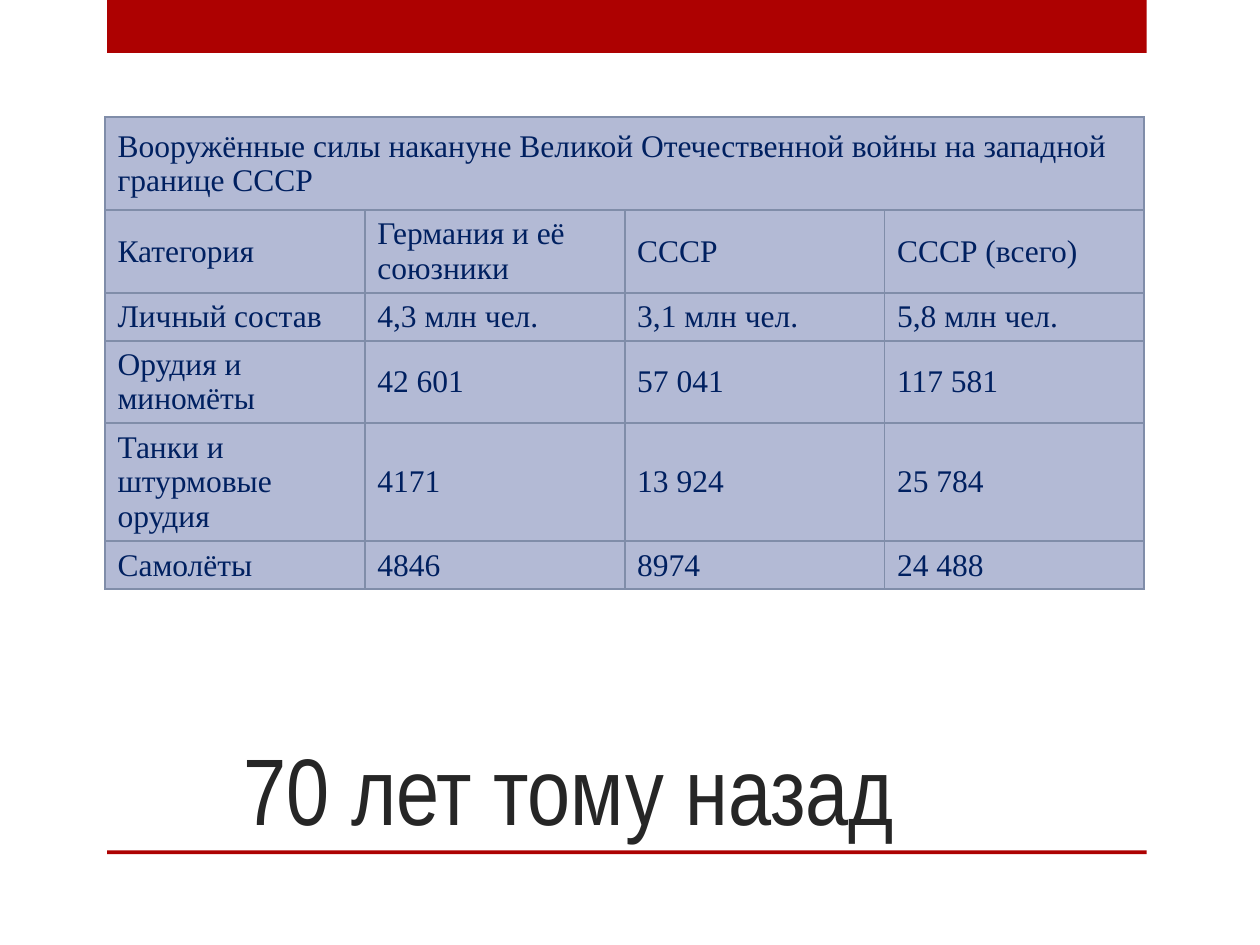
import pptx
import pptx.util
import pptx.dml.color
import pptx.enum.shapes
import pptx.enum.text
import pptx.oxml
import pptx.oxml.ns
import lxml.etree

RGBColor = pptx.dml.color.RGBColor
RED = RGBColor(0xAD, 0x01, 0x01)
CHARCOAL = RGBColor(0x26, 0x26, 0x26)
NAVY = RGBColor(0x00, 0x20, 0x60)
PALE_BLUE = RGBColor(0xB3, 0xBA, 0xD5)
BORDER_BLUE = RGBColor(0x80, 0x8D, 0xA9)

HEADING = "Вооружённые силы накануне Великой Отечественной войны на западной границе СССР"
FORCES = [
    ("Категория", "Германия и её союзники", "СССР", "СССР (всего)"),
    ("Личный состав", "4,3 млн чел.", "3,1 млн чел.", "5,8 млн чел."),
    ("Орудия и миномёты", "42 601", "57 041", "117 581"),
    ("Танки и штурмовые орудия", "4171", "13 924", "25 784"),
    ("Самолёты", "4846", "8974", "24 488"),
]
ROW_HEIGHTS = [0.74, 0.65, 0.38, 0.65, 0.94, 0.38]  # inches


class SlideBuilder:
    """Places elements by percentages of the slide's width and height."""

    title_font, table_font = "Arial Narrow", "Times New Roman"
    title_size, table_size = pptx.util.Pt(54), pptx.util.Pt(18)
    border_width = pptx.util.Pt(1.25)

    def __init__(self, deck):
        self.width, self.height = deck.slide_width, deck.slide_height
        self.slide = deck.slides.add_slide(deck.slide_layouts[5])

    def box(self, left, top, width, height):
        return (int(self.width * left / 100), int(self.height * top / 100),
                int(self.width * width / 100), int(self.height * height / 100))

    def style(self, paragraph, font, size, color):
        paragraph.font.name = font
        paragraph.font.size = size
        paragraph.font.color.rgb = color

    def band(self, *place):
        band = self.slide.shapes.add_shape(
            pptx.enum.shapes.MSO_SHAPE.RECTANGLE, *self.box(*place))
        band.shadow.inherit = False
        band.fill.solid()
        band.fill.fore_color.rgb = RED
        band.line.fill.background()

    def title(self, text, *place):
        title = self.slide.shapes.title
        title.left, title.top, title.width, title.height = self.box(*place)
        frame = title.text_frame
        frame.text = text
        frame.word_wrap = True
        frame.auto_size = pptx.enum.text.MSO_AUTO_SIZE.NONE
        frame.vertical_anchor = pptx.enum.text.MSO_ANCHOR.BOTTOM
        frame.margin_left = pptx.util.Inches(1.1)
        paragraph = frame.paragraphs[0]
        paragraph.alignment = pptx.enum.text.PP_ALIGN.LEFT
        self.style(paragraph, self.title_font, self.title_size, CHARCOAL)

    def table(self, heading, rows, row_heights, *place):
        table = self.slide.shapes.add_table(
            len(rows) + 1, len(rows[0]), *self.box(*place)).table
        for row, height in zip(table.rows, row_heights):
            row.height = pptx.util.Inches(height)
        table.cell(0, 0).merge(table.cell(0, len(rows[0]) - 1))
        self.fill_cell(table.cell(0, 0), heading)
        for spanned in list(table.rows[0].cells)[1:]:
            self.border(spanned)
        for r, row in enumerate(rows, 1):
            for c, text in enumerate(row):
                self.fill_cell(table.cell(r, c), text)

    def fill_cell(self, cell, text):
        cell.text = text
        cell.vertical_anchor = pptx.enum.text.MSO_ANCHOR.MIDDLE
        paragraph = cell.text_frame.paragraphs[0]
        self.style(paragraph, self.table_font, self.table_size, NAVY)
        paragraph.font.bold = False
        self.border(cell)
        cell.fill.solid()
        cell.fill.fore_color.rgb = PALE_BLUE

    def border(self, cell):
        qn = pptx.oxml.ns.qn
        properties = cell._tc.get_or_add_tcPr()
        for side in ("a:lnL", "a:lnR", "a:lnT", "a:lnB"):
            line = lxml.etree.SubElement(properties, qn(side), w=str(self.border_width))
            fill = lxml.etree.SubElement(line, qn("a:solidFill"))
            lxml.etree.SubElement(fill, qn("a:srgbClr"), val=str(BORDER_BLUE))


def main():
    deck = pptx.Presentation()
    deck.slide_width, deck.slide_height = pptx.util.Inches(10), pptx.util.Inches(7.5)
    builder = SlideBuilder(deck)
    builder.band(8.5, 0, 82.5, 5.6)
    builder.band(8.5, 90, 82.5, 0.4)
    builder.title("70 лет тому назад", 8.33, 66.67, 74.2, 23.33)
    builder.table(HEADING, FORCES, ROW_HEIGHTS, 8.33, 12.4, 82.5, 49.87)
    deck.save("out.pptx")


if __name__ == "__main__":
    main()
